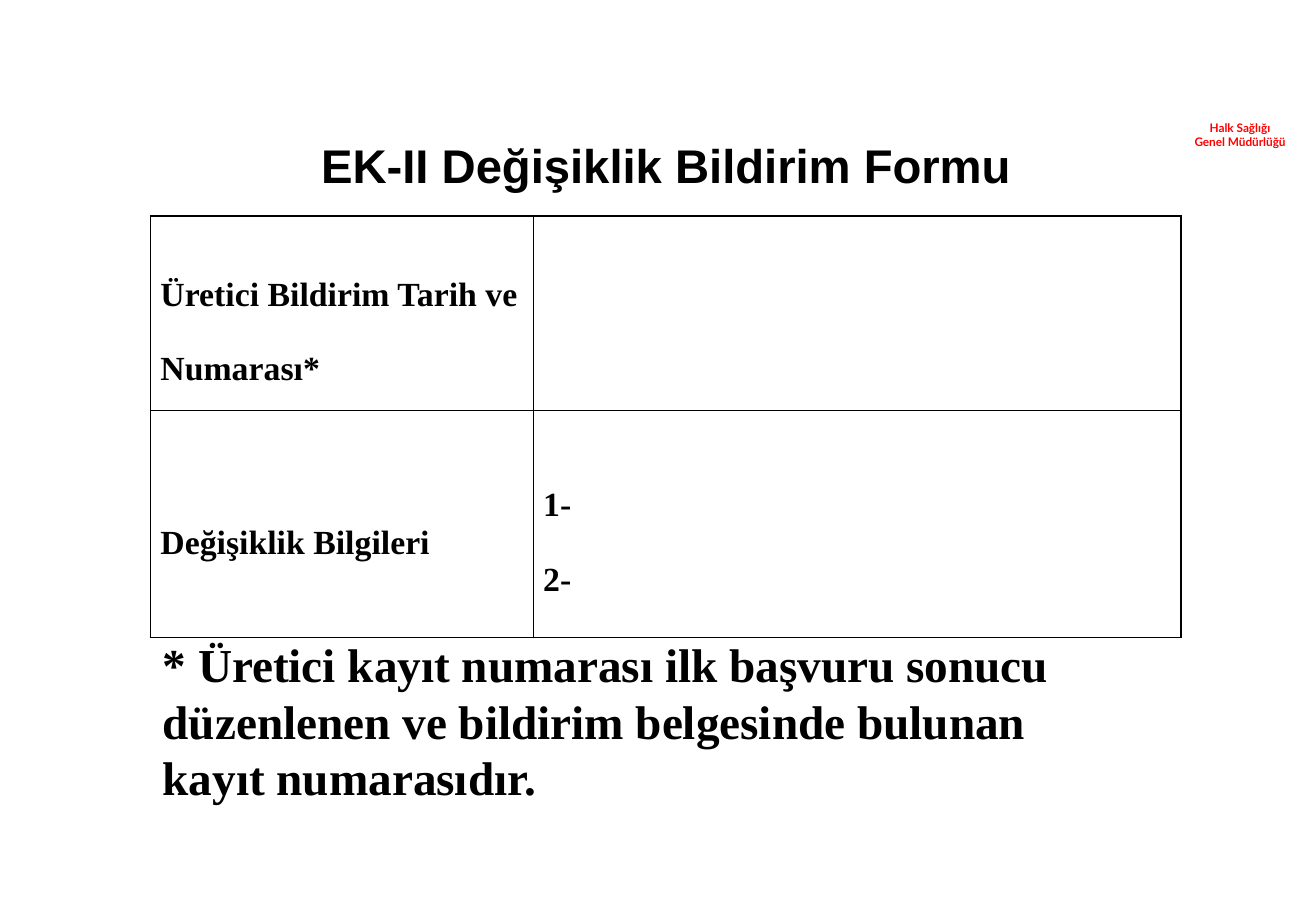
from lxml.etree import SubElement
from pptx import Presentation
from pptx.dml.color import RGBColor
from pptx.enum.shapes import MSO_SHAPE
from pptx.enum.text import MSO_ANCHOR, PP_ALIGN
from pptx.oxml.ns import qn
from pptx.util import Inches, Pt

BLACK = RGBColor(0, 0, 0)
WHITE = RGBColor(255, 255, 255)
RED = RGBColor(255, 0, 0)

LABEL = {"name": "Lato", "size": Pt(7), "bold": True}
TITLE = {"name": "Arial", "size": Pt(28), "bold": True}
CELL = {"name": "Times New Roman", "size": Pt(20), "bold": True}
NOTE = {**CELL, "size": Pt(28)}

COLS = [3.15, 5.33]
ROWS = [1.6, 1.87]
FORM = [
    [["Üretici Bildirim Tarih ve Numarası*"], []],
    [["Değişiklik Bilgileri"], ["1-", "2-"]],
]


def write(tf, lines, fmt, color=BLACK, align=PP_ALIGN.LEFT, spacing=None):
    tf.word_wrap = True
    for i, line in enumerate(lines):
        p = tf.paragraphs[0] if i == 0 else tf.add_paragraph()
        p.alignment = align
        p.line_spacing = spacing
        r = p.add_run()
        r.text = line
        for key, value in fmt.items():
            setattr(r.font, key, value)
        r.font.color.rgb = color


def add_label(s, box, lines):
    sp = s.shapes.add_shape(MSO_SHAPE.RECTANGLE, *map(Inches, box))
    sp.shadow.inherit = False
    sp.fill.solid()
    sp.fill.fore_color.rgb = WHITE
    sp.line.fill.background()
    tf = sp.text_frame
    for side in ("left", "top", "right", "bottom"):
        setattr(tf, f"margin_{side}", 0)
    write(tf, lines, LABEL, RED, PP_ALIGN.CENTER)


def add_text(s, box, text, fmt, align=PP_ALIGN.LEFT, anchor=MSO_ANCHOR.TOP):
    tf = s.shapes.add_textbox(*map(Inches, box)).text_frame
    tf.vertical_anchor = anchor
    write(tf, [text], fmt, align=align)


def add_borders(cell):
    tcPr = cell._tc.get_or_add_tcPr()
    for i, side in enumerate("LRTB"):
        ln = SubElement(tcPr, qn(f"a:ln{side}"), w=str(Pt(1)))
        fill = SubElement(ln, qn("a:solidFill"))
        SubElement(fill, qn("a:srgbClr"), val=str(BLACK))
        tcPr.insert(i, ln)


def add_form(s, left, top):
    box = (left, top, sum(COLS), sum(ROWS))
    table = s.shapes.add_table(len(ROWS), len(COLS), *map(Inches, box)).table
    table.first_row = table.horz_banding = False
    for col, width in zip(table.columns, COLS):
        col.width = Inches(width)
    for row, height, texts in zip(table.rows, ROWS, FORM):
        row.height = Inches(height)
        for cell, lines in zip(row.cells, texts):
            cell.fill.background()
            cell.vertical_anchor = MSO_ANCHOR.MIDDLE
            cell.margin_left = cell.margin_right = Inches(0.08)
            cell.margin_top = cell.margin_bottom = 0
            write(cell.text_frame, lines, CELL, spacing=2.0)
            add_borders(cell)


def main():
    prs = Presentation()
    prs.slide_width, prs.slide_height = Inches(10.83), Inches(7.5)
    s = prs.slides.add_slide(prs.slide_layouts[6])
    add_label(s, (9.64, 0.99, 1.13, 0.24), ["Halk Sağlığı", "Genel Müdürlüğü"])
    add_text(s, (1.24, 1.07, 8.48, 0.55), "EK-II Değişiklik Bildirim Formu",
             TITLE, PP_ALIGN.CENTER)
    add_form(s, 1.24, 1.78)
    add_text(s, (1.24, 5.17, 8.19, 1.52),
             "* Üretici kayıt numarası ilk başvuru sonucu düzenlenen ve "
             "bildirim belgesinde bulunan kayıt numarasıdır.",
             NOTE, anchor=MSO_ANCHOR.MIDDLE)
    prs.save("out.pptx")


if __name__ == "__main__":
    main()
